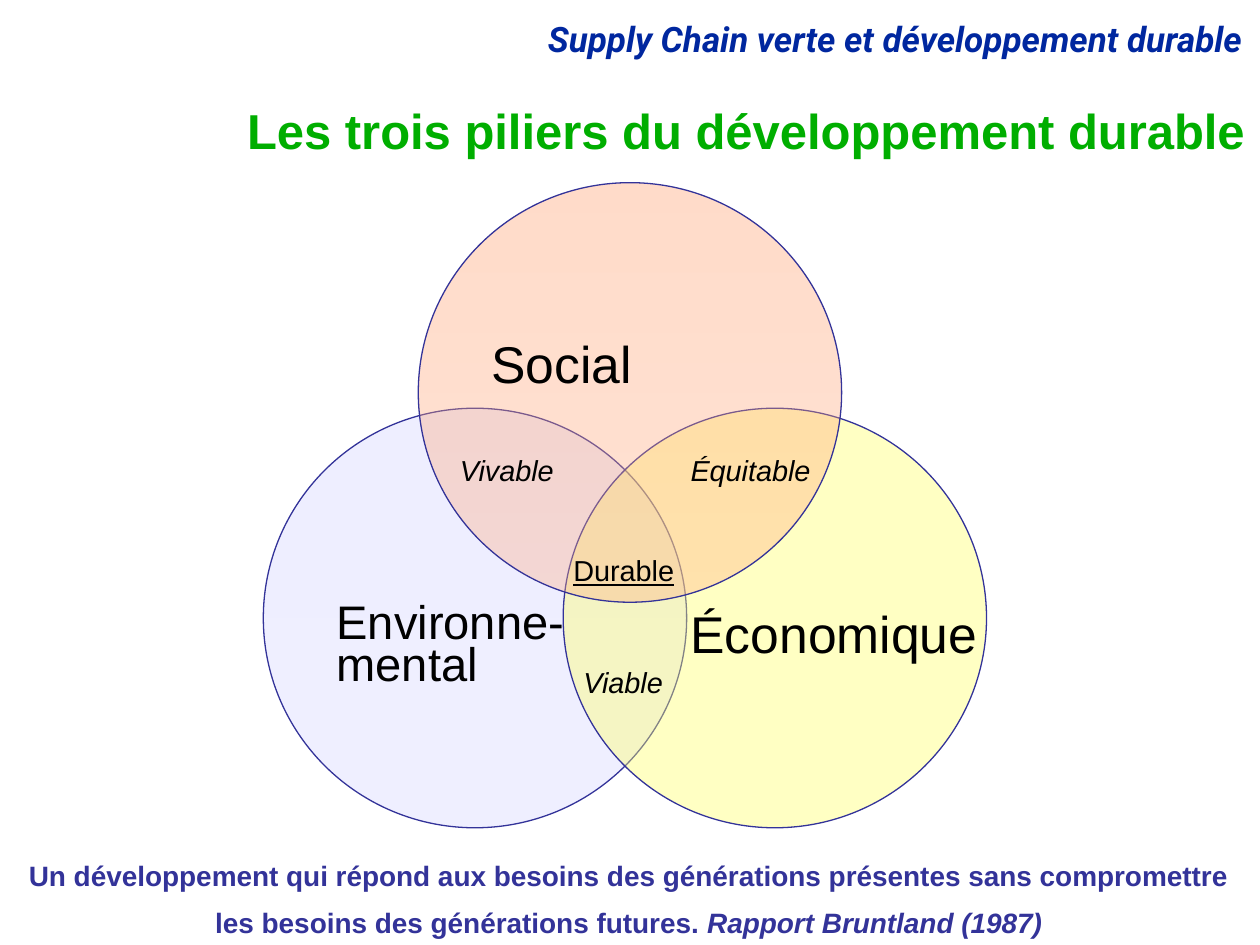
from lxml import etree
from pptx import Presentation
from pptx.dml.color import RGBColor
from pptx.enum.shapes import MSO_SHAPE
from pptx.enum.text import MSO_ANCHOR, MSO_AUTO_SIZE, PP_ALIGN
from pptx.oxml.ns import qn
from pptx.util import Inches, Pt

ELLIPSE = MSO_SHAPE.OVAL
TOP, BOTTOM = MSO_ANCHOR.TOP, MSO_ANCHOR.BOTTOM
LEFT, CENTER, RIGHT = PP_ALIGN.LEFT, PP_ALIGN.CENTER, PP_ALIGN.RIGHT
FIXED, GROW = MSO_AUTO_SIZE.NONE, MSO_AUTO_SIZE.SHAPE_TO_FIT_TEXT

BLACK = RGBColor(0x00, 0x00, 0x00)
BLUE = RGBColor(0x00, 0x27, 0x9F)
GREEN = RGBColor(0x00, 0xAE, 0x00)
INDIGO = RGBColor(0x33, 0x33, 0x99)
LAVENDER = RGBColor(0xCC, 0xCC, 0xFF)
LAVENDER_LIGHT = RGBColor(0xD1, 0xD1, 0xFF)
YELLOW = RGBColor(0xFF, 0xFF, 0x66)
ORANGE = RGBColor(0xFF, 0x99, 0x66)
ORANGE_LIGHT = RGBColor(0xFF, 0xAD, 0x83)


class VennSlide:
    """Draws the titles, circles and labels of a Venn diagram slide."""

    def __init__(self, page, font="Arial"):
        self.page = page
        self.font = font

    def frame(self, shape, margins, anchor=TOP, wrap=True, fit=FIXED):
        frame = shape.text_frame
        frame.word_wrap = wrap
        frame.auto_size = fit
        frame.vertical_anchor = anchor
        (frame.margin_left, frame.margin_top,
         frame.margin_right, frame.margin_bottom) = map(Inches, margins)
        return frame

    def add_span(self, para, text, size, color=BLACK, font=None,
                 bold=None, italic=None, underline=None):
        span = para.add_run()
        span.text = text
        span.font.name = font or self.font
        span.font.size = Pt(size)
        span.font.color.rgb = color
        span.font.bold = bold
        span.font.italic = italic
        span.font.underline = underline

    def title(self, text):
        shape = self.page.shapes.title
        shape.left, shape.top, shape.width, shape.height = map(
            Inches, (0.64, 0.77, 9.34, 0.43))
        para = self.frame(shape, (0.1, 0.08, 0.1, 0.05)).paragraphs[0]
        para.alignment, para.line_spacing = RIGHT, 0.9
        self.add_span(para, text, 28, GREEN, bold=True)

    def text_box(self, place, margins=(0.1, 0.05, 0.1, 0.05), wrap=True):
        box = self.page.shapes.add_textbox(*map(Inches, place))
        return self.frame(box, margins, wrap=wrap, fit=GROW)

    def header(self, text):
        para = self.text_box((1.88, 0.13, 8.08, 0.4)).paragraphs[0]
        para.alignment, para.line_spacing = RIGHT, 0.9
        self.add_span(para, text, 20, BLUE, "Roboto", bold=True, italic=True)

    def label(self, text, left, top, width, **styles):
        frame = self.text_box((left, top, width, 0.37), (0.09, 0.05, 0.09, 0.05), False)
        self.add_span(frame.paragraphs[0], text, 16.5, **styles)

    def circle(self, left, top, colors, opacity, lines, size, margins,
               anchor=TOP, align=LEFT, spacings=(1.0,)):
        shape = self.page.shapes.add_shape(
            ELLIPSE, *map(Inches, (left, top, 3.36, 3.33)))
        shape.shadow.inherit = False
        shape.line.color.rgb = INDIGO
        shape.line.width = Pt(0.75)
        if len(colors) == 1:
            shape.fill.solid()
            shape.fill.fore_color.rgb = colors[0]
        else:
            shape.fill.gradient()
            shape.fill.gradient_angle = 270
            for stop, color in zip(shape.fill.gradient_stops, colors):
                stop.color.rgb = color
        properties = shape.element.spPr
        fill = properties.find(qn("a:solidFill" if len(colors) == 1 else "a:gradFill"))
        for color in fill.iter(qn("a:srgbClr")):
            etree.SubElement(color, qn("a:alpha")).set("val", str(opacity * 1000))
        frame = self.frame(shape, margins, anchor, wrap=False)
        for index, (text, spacing) in enumerate(zip(lines, spacings)):
            para = frame.add_paragraph() if index else frame.paragraphs[0]
            para.alignment, para.line_spacing = align, spacing
            para.space_before = Pt(size * 0.2 if index else 0)
            self.add_span(para, text, size)

    def quote(self, lines):
        frame = self.text_box((0, 6.66, 9.98, 1.19))
        for index, spans in enumerate(lines):
            para = frame.add_paragraph() if index else frame.paragraphs[0]
            para.alignment, para.line_spacing = CENTER, 1.4
            for text, italic in spans:
                self.add_span(para, text, 16, INDIGO, bold=True, italic=italic)


def main():
    deck = Presentation()
    deck.slide_width, deck.slide_height = Inches(10), Inches(7.5)
    venn = VennSlide(deck.slides.add_slide(deck.slide_layouts[5]))

    venn.header("Supply Chain verte et développement durable")
    venn.title("Les trois piliers du développement durable")

    venn.circle(2.09, 3.24, (LAVENDER, LAVENDER_LIGHT), 33, ("Environne-", "mental"),
                26.9, (0.09, 0.05, 0.74, 0.63), BOTTOM, spacings=(1.3, 0.5))
    venn.circle(4.47, 3.24, (YELLOW,), 39, ("Économique",),
                29.5, (1.03, 0.05, 0.09, 0.81), BOTTOM, CENTER)
    venn.circle(3.32, 1.45, (ORANGE, ORANGE_LIGHT), 35, ("Social",),
                29.5, (0.09, 0.7, 0.09, 0.05))

    venn.label("Équitable", 5.39, 3.54, 1.15, italic=True)
    venn.label("Viable", 4.54, 5.23, 0.82, italic=True)
    venn.label("Vivable", 3.56, 3.54, 0.94, italic=True)
    venn.label("Durable", 4.46, 4.34, 0.99, underline=True)

    venn.quote((
        (("Un développement qui répond aux besoins des générations "
          "présentes sans compromettre", False),),
        (("les besoins des générations futures. ", False),
         ("Rapport Bruntland (1987)", True)),
    ))
    deck.save("out.pptx")


if __name__ == "__main__":
    main()
